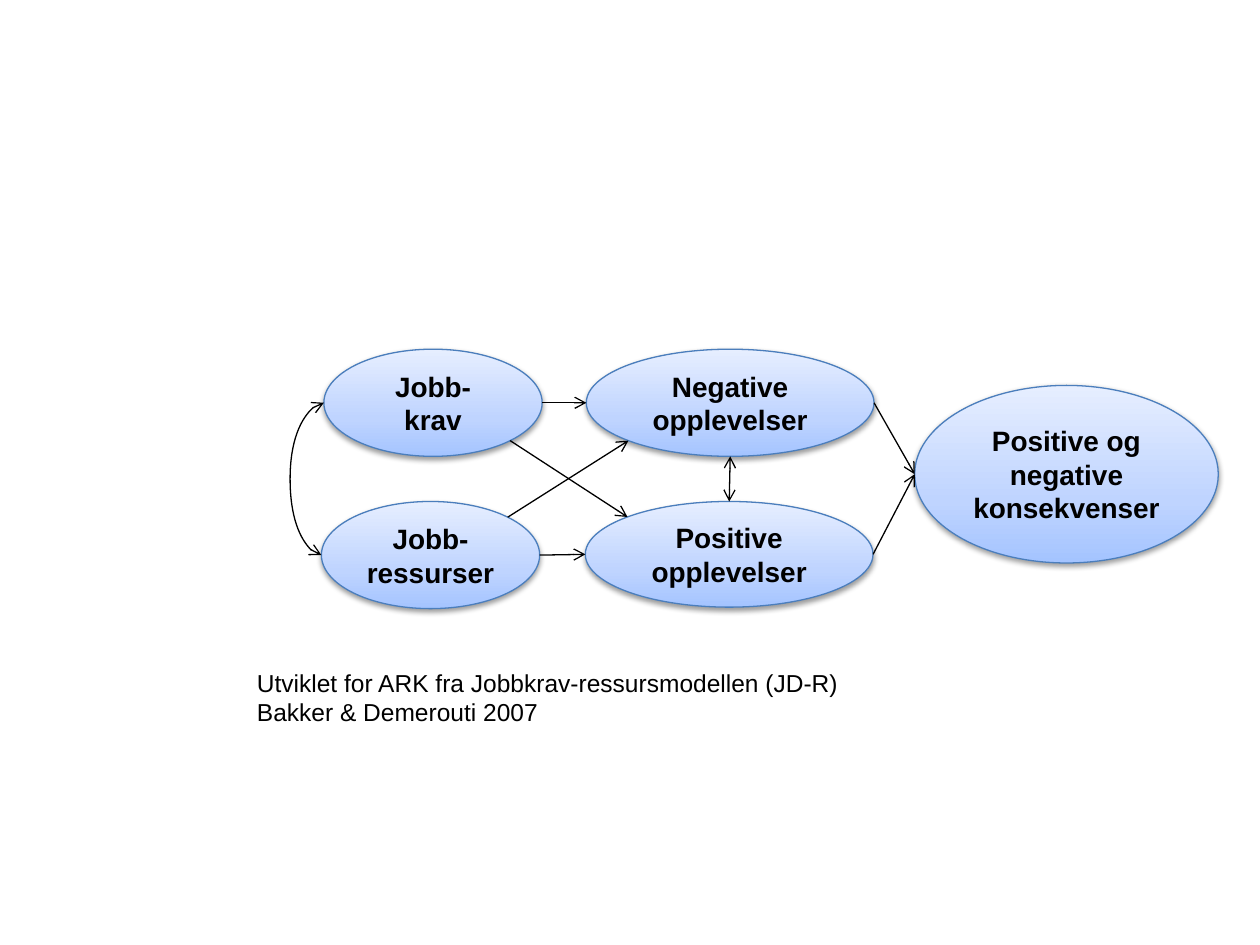
from copy import deepcopy
from math import cos, radians, sin

from lxml import etree
from pptx import Presentation
from pptx.dml.color import RGBColor
from pptx.enum import shapes, text
from pptx.oxml import parse_xml
from pptx.oxml.ns import nsdecls, qn
from pptx.util import Cm, Pt

BLACK = "000000"
GRADIENT = [(0, "A4C4FF"), (0.35, "BFD4FF"), (1, "E6EEFF")]
# Connection sites of an ellipse, counter-clockwise from the top
TOP, TOP_LEFT, LEFT, BOTTOM_LEFT, BOTTOM, BOTTOM_RIGHT, RIGHT, TOP_RIGHT = range(8)

# name: label lines, left, top, width, height in cm within the model
NODES = {
    "demands": (["Jobb-", "krav"], 0.05, 0, 4.4, 2.16),
    "resources": (["Jobb-ressurser"], 0, 3.07, 4.4, 2.16),
    "positive": (["Positive opplevelser"], 5.32, 3.07, 5.8, 2.13),
    "negative": (["Negative opplevelser"], 5.34, 0, 5.8, 2.16),
    "outcomes": (["Positive og negative konsekvenser"], 11.96, 0.73, 6.12, 3.58),
}
# from, site, to, site, arrowheads at both ends
ARROWS = [
    ("demands", RIGHT, "negative", LEFT, False),
    ("resources", RIGHT, "positive", LEFT, False),
    ("negative", RIGHT, "outcomes", LEFT, False),
    ("positive", RIGHT, "outcomes", LEFT, False),
    ("positive", TOP, "negative", BOTTOM, True),
    ("resources", TOP_RIGHT, "negative", BOTTOM_LEFT, False),
    ("demands", LEFT, "resources", LEFT, True),
    ("demands", BOTTOM_RIGHT, "positive", TOP_LEFT, False),
]


def colour(value):
    return RGBColor.from_string(value)


def write(frame, lines, align, **font):
    for number, line in enumerate(lines):
        para = frame.paragraphs[0] if number == 0 else frame.add_paragraph()
        para.alignment = align
        span = para.add_run()
        span.text = line
        span.font.color.rgb = colour(BLACK)
        for name, value in font.items():
            setattr(span.font, name, value)


def add_node(page, lines, left, top, width, height):
    node = page.shapes.add_shape(shapes.MSO_SHAPE.OVAL, Cm(left), Cm(top), Cm(width), Cm(height))
    # Three-stop gradient, darkest at the bottom
    node.fill.gradient()
    stop_list = node._element.spPr.find(".//" + qn("a:gsLst"))
    stop_list.append(deepcopy(stop_list[0]))
    for stop, (position, value) in zip(node.fill.gradient_stops, GRADIENT):
        stop.position = position
        stop.color.rgb = colour(value)
    node.fill.gradient_angle = 90
    node.line.color.rgb = colour("4B7EBC")
    node.line.width = Pt(0.75)
    # Soft shadow below
    node.shadow.inherit = False
    node._element.spPr.find(qn("a:effectLst")).append(parse_xml(
        f'<a:outerShdw {nsdecls("a")} blurRad="40000" dist="20000" dir="5400000" rotWithShape="0">'
        f'<a:srgbClr val="{BLACK}"><a:alpha val="38000"/></a:srgbClr></a:outerShdw>'))
    node.text_frame.word_wrap = True
    node.text_frame.vertical_anchor = text.MSO_ANCHOR.MIDDLE
    write(node.text_frame, lines, text.PP_ALIGN.CENTER, name="Arial", size=Pt(16), bold=True)
    return node


def site_point(node, site):
    angle = radians(90 + 45 * site)
    return (round(node.left + node.width * (1 + cos(angle)) / 2),
            round(node.top + node.height * (1 - sin(angle)) / 2))


def add_arrow(page, start, start_site, end, end_site, both_ends):
    # A link between two left sides bows outwards
    curved = start_site == end_site == LEFT
    kind = shapes.MSO_CONNECTOR.CURVE if curved else shapes.MSO_CONNECTOR.STRAIGHT
    arrow = page.shapes.add_connector(kind, *site_point(start, start_site), *site_point(end, end_site))
    arrow.line.color.rgb = colour(BLACK)
    arrow.line.width = Pt(0.75)
    props = arrow._element.spPr
    for tag in ["headEnd", "tailEnd"] if both_ends else ["tailEnd"]:
        etree.SubElement(props.find(qn("a:ln")), qn("a:" + tag), type="arrow")
    etree.SubElement(props, qn("a:effectLst"))
    if curved:
        bend = round(Cm(0.68) / arrow.width * 100000)
        guides = props.find(qn("a:prstGeom")).get_or_add_avLst()
        etree.SubElement(guides, qn("a:gd"), name="adj1", fmla=f"val {bend}")
    # Glue both ends to the ellipses' eight-site numbering
    links = arrow._element.find(".//" + qn("p:cNvCxnSpPr"))
    for tag, node, site in (("stCxn", start, start_site), ("endCxn", end, end_site)):
        etree.SubElement(links, qn("a:" + tag), id=str(node.shape_id), idx=str(site))


def add_model(page, left, top):
    nodes = {name: add_node(page, lines, left + x, top + y, width, height)
             for name, (lines, x, y, width, height) in NODES.items()}
    for start, start_site, end, end_site, both_ends in ARROWS:
        add_arrow(page, nodes[start], start_site, nodes[end], end_site, both_ends)


def add_source_note(page, left, top, width, height):
    box = page.shapes.add_textbox(Cm(left), Cm(top), Cm(width), Cm(height))
    box.text_frame.word_wrap = False
    box.text_frame.auto_size = text.MSO_AUTO_SIZE.SHAPE_TO_FIT_TEXT
    write(box.text_frame,
          ["Utviklet for ARK fra Jobbkrav-ressursmodellen (JD-R)", "Bakker & Demerouti 2007"],
          text.PP_ALIGN.LEFT, name="Arial", size=Pt(14))


def main():
    deck = Presentation()
    deck.slide_width, deck.slide_height = Cm(25.4), Cm(19.05)
    page = deck.slides.add_slide(deck.slide_layouts[6])
    add_model(page, 6.48, 7.04)
    add_source_note(page, 4.93, 13.34, 12.42, 1.45)
    deck.save("out.pptx")


if __name__ == "__main__":
    main()
